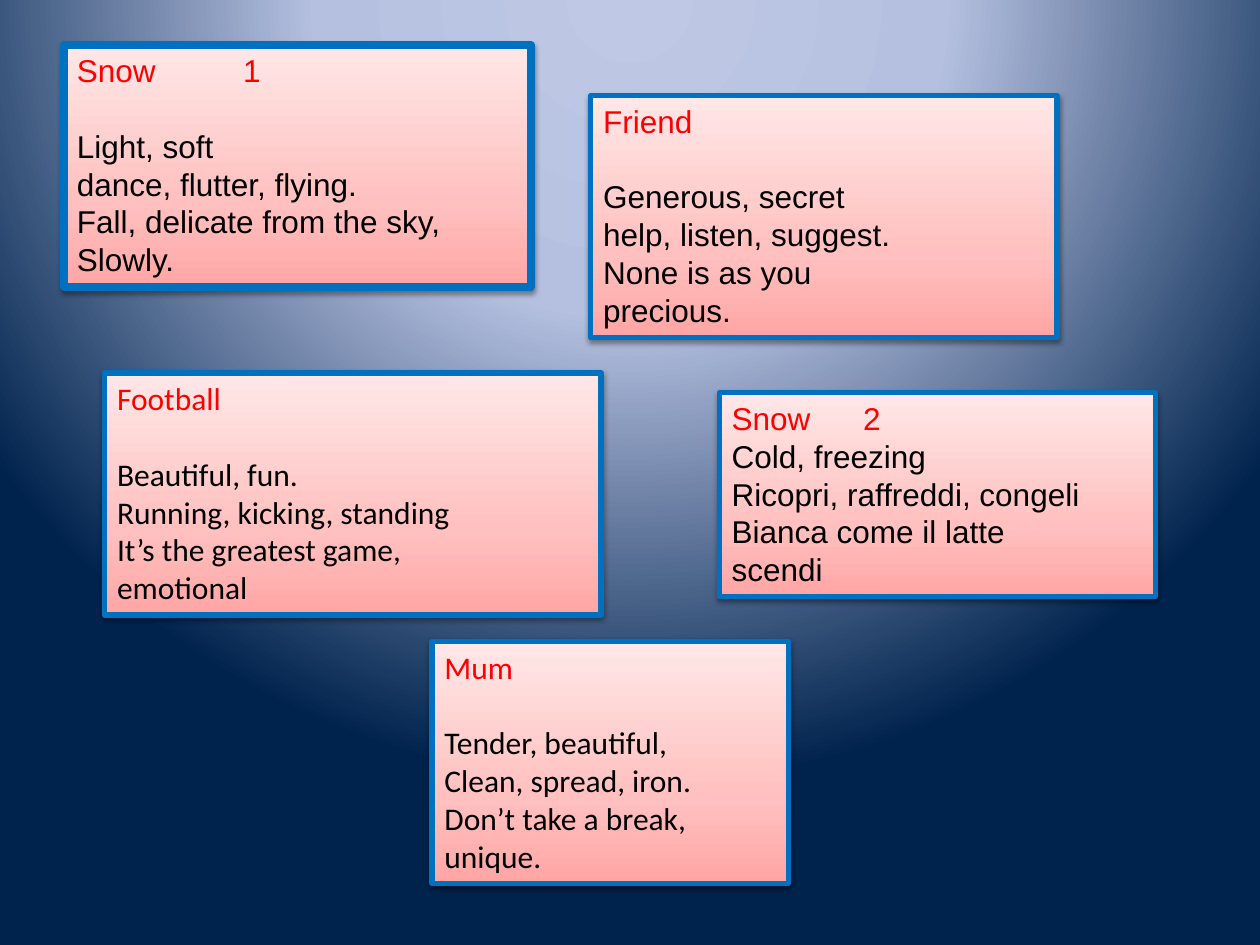
from lxml.etree import SubElement
from pptx import Presentation
from pptx.dml.color import RGBColor
from pptx.enum.shapes import MSO_SHAPE
from pptx.enum.text import MSO_ANCHOR, PP_ALIGN
from pptx.oxml.ns import qn
from pptx.util import Cm, Pt

RED = RGBColor(0xFF, 0x00, 0x00)
BLACK = RGBColor(0x00, 0x00, 0x00)
BLUE = RGBColor(0x00, 0x70, 0xC0)
PINK_STOPS = [
    (0, RGBColor(0xFF, 0xA6, 0xA5)),
    (35, RGBColor(0xFF, 0xC0, 0xBF)),
    (100, RGBColor(0xFF, 0xE7, 0xE7)),
]
SKY_STOPS = [
    (0, RGBColor(0xBF, 0xC9, 0xE5)),
    (40, RGBColor(0xB5, 0xC0, 0xE0)),
    (100, RGBColor(0x00, 0x23, 0x4D)),
]

TEXT_SIZE = Pt(18)
LINE_HEIGHT = Pt(21.6)

POEMS = [
    ((1.3, 0.91, 9.4, 4.88), 4.5, "Arial", "Snow\t1", 3.35, True,
     ["Light, soft", "dance, flutter, flying.",
      "Fall, delicate from the sky,", "Slowly."]),
    ((11.91, 1.93, 9.4, 4.88), 3, "Arial", "Friend", None, True,
     ["Generous, secret", "help, listen, suggest.",
      "None is as you", "precious."]),
    ((14.5, 7.92, 8.79, 4.11), 3, "Arial", "Snow\t2", 2.65, False,
     ["Cold, freezing", "Ricopri, raffreddi, congeli",
      "Bianca come il latte", "scendi"]),
    ((2.11, 7.52, 10.01, 4.88), 3, "Calibri", "Football", None, True,
     ["Beautiful, fun.", "Running, kicking, standing",
      "It’s the greatest game,", "emotional"]),
    ((8.71, 12.93, 7.19, 4.88), 3, "Calibri", "Mum", None, True,
     ["Tender, beautiful,", "Clean, spread, iron.",
      "Don’t take a break,", "unique."]),
]


def add_color(parent, color):
    return SubElement(parent, qn("a:srgbClr"), val=str(color))


def set_gradient(fill, element, stops):
    fill.gradient()
    gradient = next(element.iter(qn("a:gradFill")))
    for child in list(gradient):
        gradient.remove(child)
    stop_list = SubElement(gradient, qn("a:gsLst"))
    for position, color in stops:
        stop = SubElement(stop_list, qn("a:gs"), pos=str(position * 1000))
        add_color(stop, color)
    return gradient


def paint_background(page):
    gradient = set_gradient(page.background.fill, page.element, SKY_STOPS)
    circle = SubElement(gradient, qn("a:path"), path="circle")
    SubElement(circle, qn("a:fillToRect"),
               l="50000", t="-80000", r="50000", b="180000")


def add_shadow(shape):
    shape.shadow.inherit = False
    effects = next(shape.element.iter(qn("a:effectLst")))
    shadow = SubElement(effects, qn("a:outerShdw"), blurRad="40000",
                        dist="20000", dir="5400000", rotWithShape="0")
    SubElement(add_color(shadow, BLACK), qn("a:alpha"), val="38000")


def add_tab_stop(para, position):
    tabs = SubElement(para._p.get_or_add_pPr(), qn("a:tabLst"))
    SubElement(tabs, qn("a:tab"), pos=str(Cm(position)), algn="l")


def add_poem(page, box, border, font_name, title, tab, title_gap, lines):
    card = page.shapes.add_shape(MSO_SHAPE.RECTANGLE, *map(Cm, box))
    gradient = set_gradient(card.fill, card.element, PINK_STOPS)
    SubElement(gradient, qn("a:lin"), ang="16200000", scaled="1")
    card.line.color.rgb = BLUE
    card.line.width = Pt(border)
    add_shadow(card)

    frame = card.text_frame
    frame.word_wrap = True
    frame.vertical_anchor = MSO_ANCHOR.TOP
    frame.text = "\n".join([title, *lines])
    for index, para in enumerate(frame.paragraphs):
        para.alignment = PP_ALIGN.LEFT
        para.line_spacing = LINE_HEIGHT
        if index == 1 and title_gap:
            para.space_before = LINE_HEIGHT
        if index == 0 and tab:
            add_tab_stop(para, tab)
        for span in para.runs:
            span.font.name = font_name
            span.font.size = TEXT_SIZE
            span.font.color.rgb = BLACK if index else RED


def main():
    deck = Presentation()
    deck.slide_width = Cm(25.4)
    deck.slide_height = Cm(19.05)
    page = deck.slides.add_slide(deck.slide_layouts[6])
    paint_background(page)
    for poem in POEMS:
        add_poem(page, *poem)
    deck.save("out.pptx")


if __name__ == "__main__":
    main()
